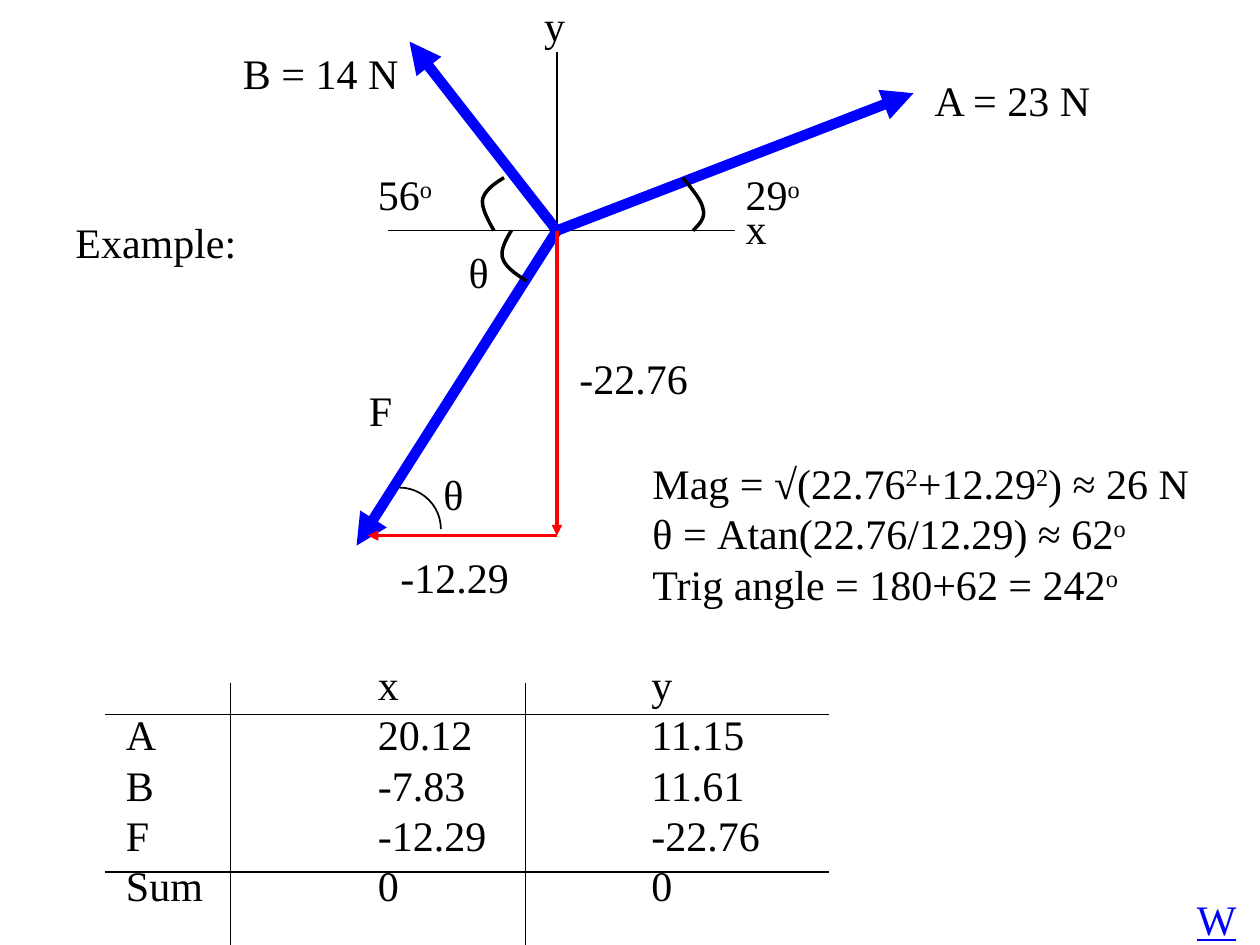
"""Build a slide that adds force vectors by components."""
import pptx
import pptx.dml.color
import pptx.enum.shapes
import pptx.oxml
import pptx.oxml.ns
import pptx.util
from pptx.util import Inches

FONT = "Times New Roman"
BLACK, BLUE, RED = "000000", "0000FF", "FF0000"
color = pptx.dml.color.RGBColor.from_string


def add_line(page, start, end, hue=BLACK, width=1, arrow=False):
    line = page.shapes.add_connector(
        pptx.enum.shapes.MSO_CONNECTOR.STRAIGHT, *map(Inches, start + end))
    line.line.color.rgb = color(hue)
    line.line.width = pptx.util.Pt(width)
    if arrow:
        pptx.oxml.ns.qn("a:tailEnd")
        head = line.line._get_or_add_ln().makeelement(
            pptx.oxml.ns.qn("a:tailEnd"), {"type": "triangle"})
        line.line._get_or_add_ln().append(head)
    properties = line._element.spPr
    properties.append(properties.makeelement(pptx.oxml.ns.qn("a:effectLst"), {}))


def write(frame, text, hue=BLACK):
    for number, row in enumerate(text.split("\n")):
        para = frame.add_paragraph() if number else frame.paragraphs[0]
        para.font.name = FONT
        para.font.size = pptx.util.Pt(24)
        para.font.color.rgb = color(hue)
        for index, piece in enumerate(row.split("^")):
            if piece:
                span = para.add_run()
                span.text = piece
                if index % 2:
                    span._r.get_or_add_rPr().set("baseline", "30000")


deck = pptx.Presentation()
deck.slide_width, deck.slide_height = Inches(10), Inches(7.5)
page = deck.slides.add_slide(deck.slide_layouts[6])

origin = (4.42, 1.83)
corner = (4.42, 4.25)
add_line(page, (4.42, 0.41), (4.42, 3.16))
add_line(page, (5.83, 1.83), (3.08, 1.83))
for tip in [(7.25, 0.74), (3.25, 0.33), (2.83, 4.33)]:
    add_line(page, origin, tip, BLUE, 6, True)
add_line(page, origin, corner, RED, 2, True)
add_line(page, corner, (2.92, 4.25), RED, 2, True)

angle_marks = [
    [(5.42, 1.41), (5.49, 1.5), (5.57, 1.59), (5.58, 1.66),
     (5.6, 1.73), (5.55, 1.78), (5.5, 1.83)],
    [(4, 1.41), (3.92, 1.46), (3.85, 1.51), (3.83, 1.58),
     (3.82, 1.65), (3.87, 1.74), (3.92, 1.83)],
    [(4.06, 1.83), (4.01, 1.91), (3.97, 1.99), (3.99, 2.05),
     (4.01, 2.12), (4.1, 2.18), (4.18, 2.23)],
]
steps = 10
for mark in angle_marks:
    points = []
    for first in (0, 3):
        for step in range(1, steps + 1):
            t = step / steps
            weights = ((1 - t) ** 3, 3 * t * (1 - t) ** 2, 3 * t ** 2 * (1 - t), t ** 3)
            points.append([
                Inches(sum(w * point[axis] for w, point in zip(weights, mark[first:first + 4])))
                for axis in (0, 1)])
    builder = page.shapes.build_freeform(*map(Inches, mark[0]))
    builder.add_line_segments(points, close=False)
    curve = builder.convert_to_shape()
    curve.shadow.inherit = False
    curve.fill.background()
    curve.line.color.rgb = color(BLACK)
    curve.line.width = pptx.util.Pt(2)

arc = page.shapes.add_shape(
    pptx.enum.shapes.MSO_SHAPE.ARC, *map(Inches, (2.84, 3.87, 0.66, 0.66)))
arc.shadow.inherit = False
arc.fill.background()
arc.line.color.rgb = color(BLACK)
arc.line.width = pptx.util.Pt(1)

labels = [
    ("Example:", 0.5, 1.67, 1.48, 0.5, BLACK),
    ("A = 23 N", 7.32, 0.54, 1.45, 0.5, BLACK),
    ("B = 14 N", 1.83, 0.33, 1.44, 0.5, BLACK),
    ("F", 2.83, 3, 0.39, 0.5, BLACK),
    ("29^o^", 5.82, 1.29, 0.65, 0.5, BLACK),
    ("56^o^", 2.9, 1.29, 0.65, 0.5, BLACK),
    ("y", 4.22, -0.05, 0.37, 0.5, BLACK),
    ("x", 5.82, 1.56, 0.37, 0.5, BLACK),
    ("θ", 3.62, 1.91, 0.38, 0.5, BLACK),
    ("θ", 3.42, 3.67, 0.38, 0.5, BLACK),
    ("-22.76", 4.5, 2.75, 1.06, 0.5, BLACK),
    ("-12.29", 3.08, 4.33, 1.06, 0.5, BLACK),
    ("Mag = √(22.76^2^+12.29^2^) ≈ 26 N\nθ = Atan(22.76/12.29) ≈ 62^o^\n"
     "Trig angle = 180+62 = 242^o^", 5.08, 3.58, 4.49, 1.3, BLACK),
    ("W", 9.4, 7.04, 0.52, 0.5, BLUE),
]
for text, left, top, width, height, hue in labels:
    box = page.shapes.add_textbox(*map(Inches, (left, top, width, height)))
    box.text_frame.word_wrap = False
    write(box.text_frame, text, hue)
    if text == "W":
        box.text_frame.paragraphs[0].font.underline = True

components = [
    ("", "x", "y"),
    ("A", "20.12", "11.15"),
    ("B", "-7.83", "11.61"),
    ("F", "-12.29", "-22.76"),
    ("Sum", "0", "0"),
]
table = page.shapes.add_table(5, 3, *map(Inches, (0.83, 5.26, 5.75, 2))).table
table.first_row = table.horz_banding = False
for column, width in zip(table.columns, (1, 2.34, 2.41)):
    column.width = Inches(width)
for row, values in enumerate(components):
    for column, (value, indent) in enumerate(zip(values, (0.17, 1.17, 1))):
        cell = table.cell(row, column)
        cell.fill.background()
        cell.margin_left = Inches(indent)
        cell.margin_right = cell.margin_top = cell.margin_bottom = 0
        write(cell.text_frame, value)
for y in (5.67, 6.92):
    add_line(page, (0.83, y), (6.58, y))
for x in (1.83, 4.17):
    add_line(page, (x, 5.42), (x, 7.5))

deck.save("out.pptx")
